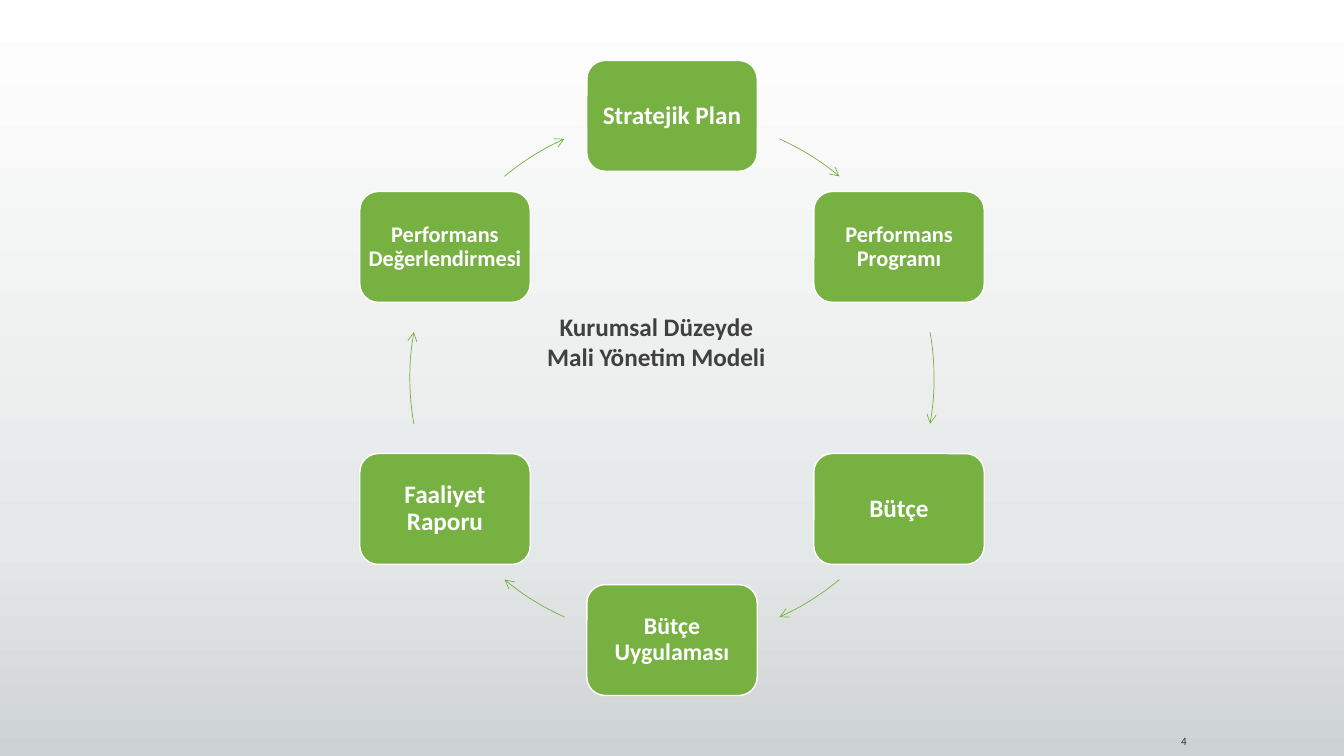
from copy import deepcopy
from math import cos, radians, sin

from pptx import Presentation
from pptx.dml.color import RGBColor
from pptx.enum.shapes import MSO_SHAPE
from pptx.enum.text import MSO_ANCHOR, PP_ALIGN
from pptx.oxml.ns import qn
from pptx.oxml.xmlchemy import OxmlElement
from pptx.util import Inches, Pt

TITLE = "Kurumsal Düzeyde\vMali Yönetim Modeli"
NUMBER = "4"
STEPS = [
    ("Stratejik Plan", 18),
    ("Performans Programı", 16),
    ("Bütçe", 18),
    ("Bütçe Uygulaması", 17),
    ("Faaliyet Raporu", 18),
    ("Performans Değerlendirmesi", 16),
]
ARCS = [(294.2, 309.7), (349.9, 10.1), (50.3, 65.8)]
SKY = [(0, "FFFFFF"), (0.72, "E5E8E8"), (1, "CDD2D2")]
GREEN, WHITE, GREY, NAVY = "77B142", "FFFFFF", "404040", "263050"
FONT = "Calibri"
WIDE, HIGH = 13.33, 7.5
MID_X, MID_Y = WIDE / 2, HIGH / 2
RING = 2.6
BOX_W, BOX_H = 1.69, 1.1


def color(code):
    return RGBColor.from_string(code)


def area(left, top, width, height):
    return [Inches(n) for n in (left, top, width, height)]


def place(shape, *box):
    shape.left, shape.top, shape.width, shape.height = area(*box)


def write(shape, text, size, code, bold=True, align=PP_ALIGN.CENTER, gap=1.0):
    frame = shape.text_frame
    frame.text = text
    frame.word_wrap = True
    frame.vertical_anchor = MSO_ANCHOR.MIDDLE
    para = frame.paragraphs[0]
    para.alignment = align
    para.line_spacing = gap
    for run in para.runs:
        font = run.font
        font.name, font.size, font.bold = FONT, Pt(size), bold
        font.color.rgb = color(code)


def paint(slide):
    fill = slide.background.fill
    fill.gradient()
    fill.gradient_angle = 270
    stops = slide.element.find(".//" + qn("a:gsLst"))
    stops.append(deepcopy(stops[-1]))
    for stop, (share, code) in zip(fill.gradient_stops, SKY):
        stop.position = share
        stop.color.rgb = color(code)


def add_step(slide, index, text, size):
    angle = radians(60 * index - 90)
    left = MID_X + RING * cos(angle) - BOX_W / 2
    top = MID_Y + RING * sin(angle) - BOX_H / 2
    box = slide.shapes.add_shape(
        MSO_SHAPE.ROUNDED_RECTANGLE, *area(left, top, BOX_W, BOX_H))
    box.shadow.inherit = False
    box.fill.solid()
    box.fill.fore_color.rgb = color(GREEN)
    box.line.color.rgb = color(WHITE)
    box.line.width = Pt(1)
    frame = box.text_frame
    frame.margin_left = frame.margin_right = Inches(0.02)
    frame.margin_top = frame.margin_bottom = Inches(0.02)
    write(box, text, size, WHITE, gap=0.9)


def add_arc(slide, start, end):
    arc = slide.shapes.add_shape(
        MSO_SHAPE.ARC,
        *area(MID_X - RING, MID_Y - RING, 2 * RING, 2 * RING))
    arc.adjustments[0] = start * 0.6
    arc.adjustments[1] = end * 0.6
    arc.shadow.inherit = False
    arc.fill.background()
    arc.line.color.rgb = color(GREEN)
    arc.line.width = Pt(0.5)
    head = OxmlElement("a:tailEnd")
    head.set("type", "arrow")
    arc.line._get_or_add_ln().append(head)


def main():
    deck = Presentation()
    deck.slide_width, deck.slide_height = Inches(WIDE), Inches(HIGH)
    slide = deck.slides.add_slide(deck.slide_layouts[5])
    paint(slide)

    for index, (text, size) in enumerate(STEPS):
        add_step(slide, index, text, size)
        turn = 180 * (index // 3)
        start, end = ARCS[index % 3]
        add_arc(slide, (start + turn) % 360, (end + turn) % 360)

    title = slide.shapes.title
    place(title, 5.2, 3.03, 2.62, 0.71)
    write(title, TITLE, 18, GREY)

    page = slide.shapes.add_textbox(*area(11.17, 7.22, 0.7, 0.26))
    write(page, NUMBER, 8, NAVY, bold=False, align=PP_ALIGN.RIGHT)
    deck.save("out.pptx")


if __name__ == "__main__":
    main()
